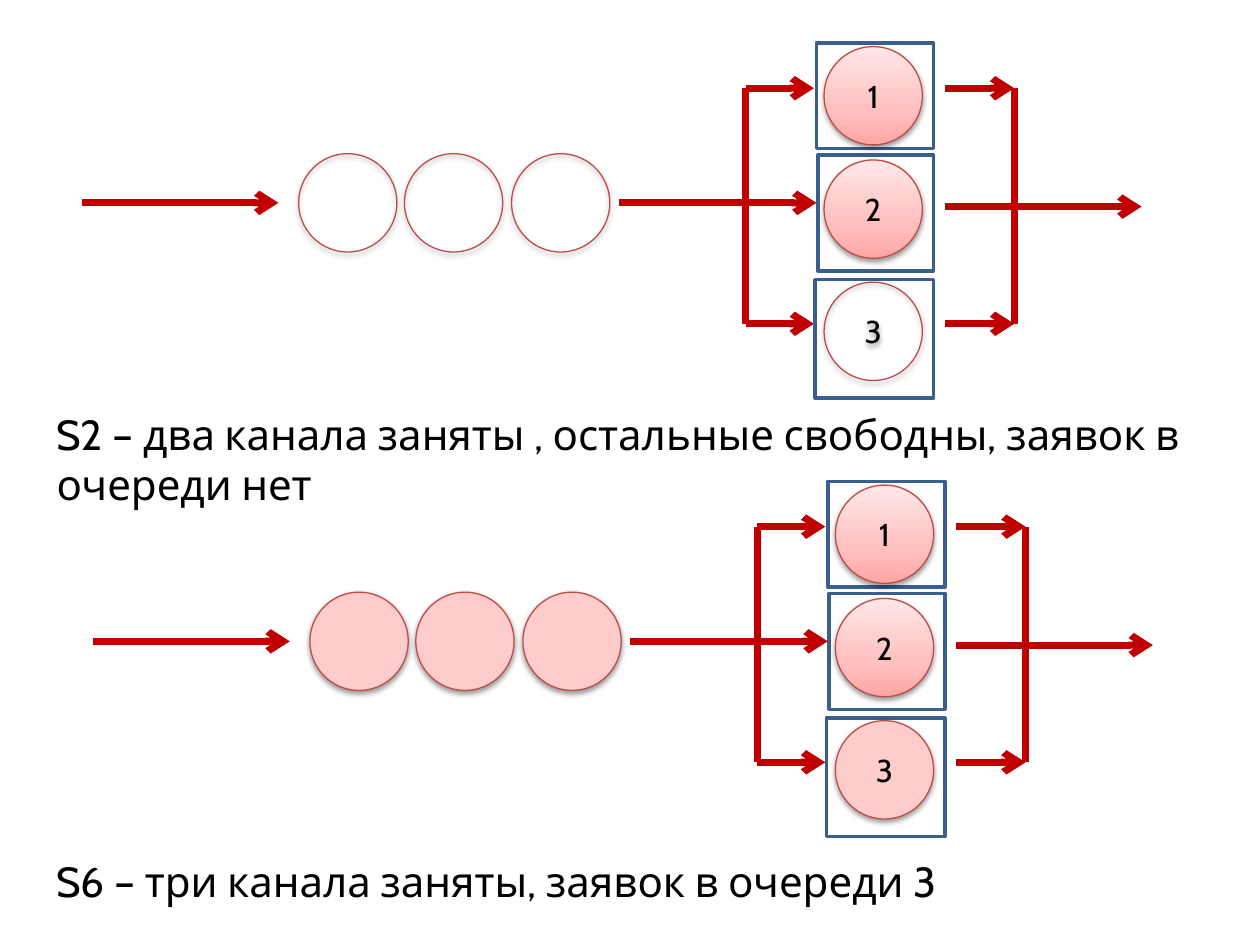
import copy

import pptx
import pptx.dml.color
import pptx.enum.shapes
import pptx.enum.text
import pptx.oxml
import pptx.oxml.ns
import pptx.util
from lxml import etree

Inches, Pt = pptx.util.Inches, pptx.util.Pt
qn = pptx.oxml.ns.qn
SHAPE = pptx.enum.shapes.MSO_SHAPE
COLORS = {"flow": "C00000", "box": "3A5F8C", "ring": "BF4C48",
          "queue": "FFCCCC", "text": "000000"}
BUSY = [(0, "FFA6A5"), (0.35, "FFC0BF"), (1, "FFE7E7")]
NS = "http://schemas.openxmlformats.org/drawingml/2006/main"
SHADOW = (f'<a:outerShdw xmlns:a="{NS}" blurRad="{Pt(3.1)}" dist="{Pt(1.6)}" '
          'dir="5400000" rotWithShape="0"><a:srgbClr val="000000">'
          '<a:alpha val="38000"/></a:srgbClr></a:outerShdw>')


def rgb(code):
    return pptx.dml.color.RGBColor.from_string(code)


class Painter:
    """Holds the style, the slide and the offset of the current diagram."""
    font = "Cabin"
    size = 0.78

    def __init__(self, slide):
        self.slide = slide
        self.dx = self.dy = 0

    def spot(self, x, y):
        return Inches(x + self.dx), Inches(y + self.dy)

    def line(self, start, end, head=True):
        link = self.slide.shapes.add_connector(
            pptx.enum.shapes.MSO_CONNECTOR.STRAIGHT,
            *self.spot(*start), *self.spot(*end))
        link.line.color.rgb = rgb(COLORS["flow"])
        link.line.width = Pt(4)
        if head:
            etree.SubElement(link.line._get_or_add_ln(), qn("a:tailEnd"), type="arrow")
        etree.SubElement(link._element.spPr, qn("a:effectLst"))

    def shape(self, kind, x, y, w, h, color, width):
        item = self.slide.shapes.add_shape(
            kind, *self.spot(x, y), Inches(w), Inches(h))
        item.shadow.inherit = False
        item.fill.background()
        item.line.color.rgb = rgb(color)
        item.line.width = Pt(width)
        return item

    def box(self, x, y, w, h):
        self.shape(SHAPE.RECTANGLE, x, y, w, h, COLORS["box"], 2)

    def circle(self, x, y, fill=None, label=""):
        """Fill is None, a colour, or a list of gradient stops."""
        item = self.shape(SHAPE.OVAL, x, y, self.size, self.size, COLORS["ring"], 0.75)
        if isinstance(fill, list):
            self.blend(item, fill)
        elif fill:
            item.fill.solid()
            item.fill.fore_color.rgb = rgb(fill)
        item._element.spPr.find(qn("a:effectLst")).append(pptx.oxml.parse_xml(SHADOW))
        if label:
            frame = item.text_frame
            frame.text = label
            frame.vertical_anchor = pptx.enum.text.MSO_ANCHOR.MIDDLE
            frame.paragraphs[0].alignment = pptx.enum.text.PP_ALIGN.CENTER
            self.style(frame, 18)

    def blend(self, item, stops):
        item.fill.gradient()
        item.fill.gradient_angle = 90
        group = item._element.spPr.find(".//" + qn("a:gsLst"))
        group.append(copy.deepcopy(group[-1]))
        for stop, (place, color) in zip(item.fill.gradient_stops, stops):
            stop.position = place
            stop.color.rgb = rgb(color)

    def style(self, frame, size):
        for run in frame.paragraphs[0].runs:
            run.font.name = self.font
            run.font.size = Pt(size)
            run.font.color.rgb = rgb(COLORS["text"])

    def caption(self, text, y, h):
        frame = self.slide.shapes.add_textbox(
            Inches(0.35), Inches(y), Inches(9.45), Inches(h)).text_frame
        frame.word_wrap = True
        frame.auto_size = pptx.enum.text.MSO_AUTO_SIZE.SHAPE_TO_FIT_TEXT
        frame.text = text
        self.style(frame, 24)

    def system(self, dx, dy, queue, third):
        """Draw a queue of three places that feeds three channels."""
        self.dx, self.dy = dx, dy
        top, low, fork, join = 0.7, 2.57, 5.92, 8.05
        for x, end, y in ((0.65, 2.21, 1.61), (4.91, 6.48, 1.61), (7.5, 9.06, 1.64)):
            self.line((x, y), (end, y))
        for y in (top, low):
            self.line((fork, y), (6.46, y))
            self.line((7.5, y), (join, y))
        for x in (fork, join):
            self.line((x, top), (x, low), head=False)
        for x in (2.37, 3.21, 4.06):
            self.circle(x, 1.22, queue)
        self.box(6.48, 0.34, 0.93, 0.84)
        self.box(6.49, 1.23, 0.92, 0.92)
        self.box(6.47, 2.22, 0.94, 0.94)
        for label, y, fill in (("3", 2.24, third), ("2", 1.27, BUSY), ("1", 0.37, BUSY)):
            self.circle(6.54, y, fill, label)


def main():
    deck = pptx.Presentation()
    deck.slide_width, deck.slide_height = Inches(10), Inches(7.5)
    art = Painter(deck.slides.add_slide(deck.slide_layouts[6]))
    art.system(0, 0, None, None)
    art.caption("S2 – два канала заняты , остальные свободны, заявок в очереди нет",
                3.19, 0.91)
    art.system(0.09, 3.48, COLORS["queue"], COLORS["queue"])
    art.caption("S6 – три канала заняты, заявок в очереди 3", 6.74, 0.5)
    deck.save("out.pptx")


if __name__ == "__main__":
    main()
